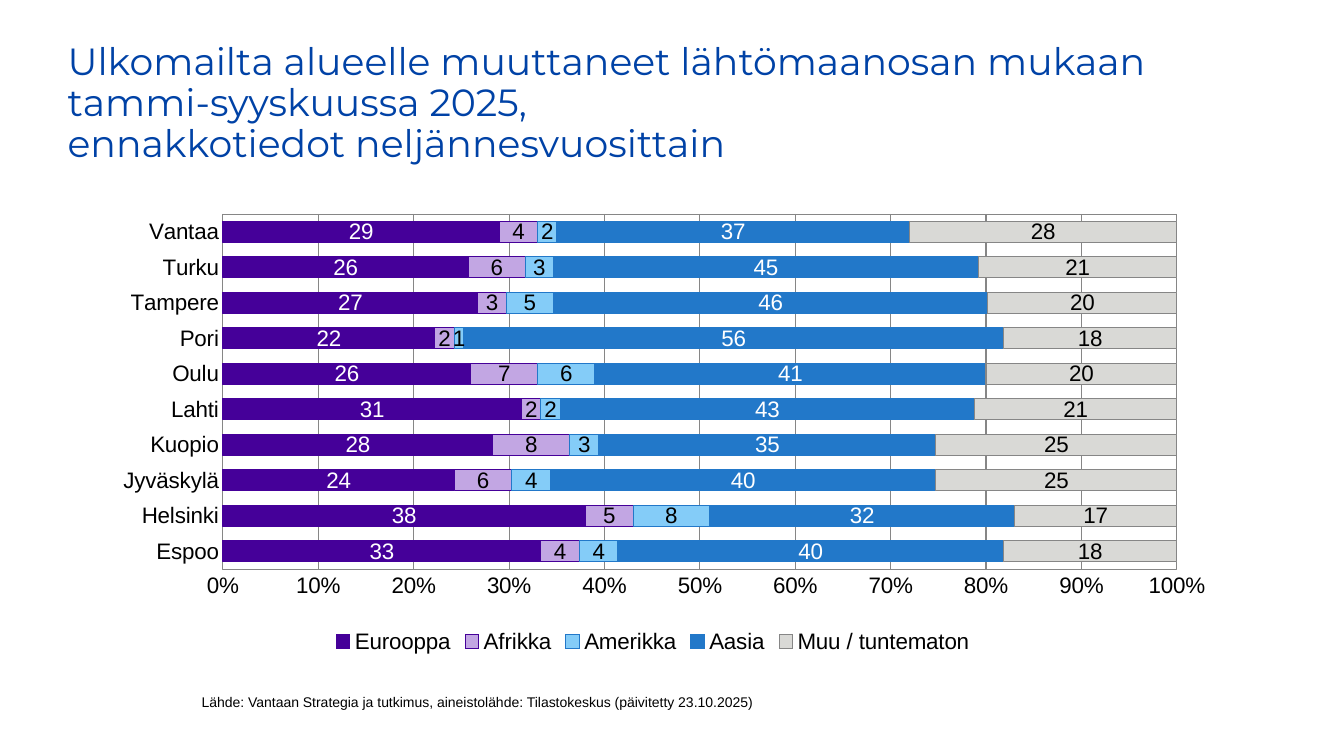
"""Builds a slide with a stacked bar chart of immigration by continent of departure."""
import pptx
import pptx.chart.data
import pptx.dml.color
import pptx.enum.chart
import pptx.enum.text
import pptx.oxml
import pptx.oxml.ns
import pptx.util

Cm, Pt = pptx.util.Cm, pptx.util.Pt
GREY = "868686"
PURPLE = "450099"
BLUE = "2278C9"


def rgb(value):
    return pptx.dml.color.RGBColor.from_string(value)


def set_font(font, size, color, name="Arial"):
    for key, value in {"size": Pt(size), "name": name, "bold": False}.items():
        setattr(font, key, value)
    font.color.rgb = rgb(color)


prs = pptx.Presentation()
prs.slide_width, prs.slide_height = Cm(33.87), Cm(19.05)
s = prs.slides.add_slide(prs.slide_layouts[5])

title = s.shapes.title
frame = {"left": Cm(1.45), "top": Cm(0.97), "width": Cm(28.5), "height": Cm(3.3)}
for key, value in frame.items():
    setattr(title, key, value)
tf = title.text_frame
tf.word_wrap = True
tf.auto_size = pptx.enum.text.MSO_AUTO_SIZE.NONE
tf.vertical_anchor = pptx.enum.text.MSO_ANCHOR.MIDDLE
p = tf.paragraphs[0]
p.text = ("Ulkomailta alueelle muuttaneet lähtömaanosan mukaan "
          "tammi-syyskuussa 2025, \vennakkotiedot neljännesvuosittain")
p.alignment = pptx.enum.text.PP_ALIGN.LEFT
p.line_spacing = 0.9
for r in p.runs:
    set_font(r.font, 27, "0042A6", "Montserrat")

cities = ["Espoo", "Helsinki", "Jyväskylä", "Kuopio", "Lahti",
          "Oulu", "Pori", "Tampere", "Turku", "Vantaa"]
continents = [
    ("Eurooppa", [33, 38, 24, 28, 31, 26, 22, 27, 26, 29], PURPLE, PURPLE, "FFFFFF"),
    ("Afrikka", [4, 5, 6, 8, 2, 7, 2, 3, 6, 4], "C2A6E3", PURPLE, "000000"),
    ("Amerikka", [4, 8, 4, 3, 2, 6, 1, 5, 3, 2], "84CCF8", BLUE, "000000"),
    ("Aasia", [40, 32, 40, 35, 43, 41, 56, 46, 45, 37], BLUE, BLUE, "FFFFFF"),
    ("Muu / tuntematon", [18, 17, 25, 25, 21, 20, 18, 20, 21, 28], "D9D9D6", GREY, "000000"),
]
data = pptx.chart.data.CategoryChartData(number_format="0")
data.categories = cities
for name, values, *colors in continents:
    data.add_series(name, values)

chart = s.shapes.add_chart(
    pptx.enum.chart.XL_CHART_TYPE.BAR_STACKED_100,
    Cm(1.85), Cm(5), Cm(29.21), Cm(11.58), data).chart
chart.has_title = False
set_font(chart.font, 16, "000000")
chart.has_legend = True
chart.legend.position = pptx.enum.chart.XL_LEGEND_POSITION.BOTTOM
chart.legend.include_in_layout = False
set_font(chart.legend.font, 16, "000000")

plot = chart.plots[0]
for key, value in {"gap_width": 70, "overlap": 100, "vary_by_categories": False}.items():
    setattr(plot, key, value)
for series, (name, values, fill, line, label) in zip(plot.series, continents):
    series.format.fill.solid()
    series.format.fill.fore_color.rgb = rgb(fill)
    series.format.line.color.rgb = rgb(line)
    series.format.line.width = Pt(0.75)
    labels = series.data_labels
    label_format = {
        "show_value": True, "number_format": "0", "number_format_is_linked": False,
        "position": pptx.enum.chart.XL_LABEL_POSITION.CENTER}
    for key, value in label_format.items():
        setattr(labels, key, value)
    set_font(labels.font, 16, label)

cat_axis, val_axis = chart.category_axis, chart.value_axis
for axis in (cat_axis, val_axis):
    axis.major_tick_mark = axis.minor_tick_mark = pptx.enum.chart.XL_TICK_MARK.NONE
    set_font(axis.tick_labels.font, 16, "000000")
val_axis.has_major_gridlines = True
for line in (cat_axis.format.line, val_axis.major_gridlines.format.line):
    line.color.rgb = rgb(GREY)
    line.width = Pt(0.75)
val_axis.format.line.fill.background()
val_scale = {"minimum_scale": 0, "maximum_scale": 1, "major_unit": 0.1}
for key, value in val_scale.items():
    setattr(val_axis, key, value)
val_axis.tick_labels.number_format = "0%"
val_axis.tick_labels.number_format_is_linked = False

ns = pptx.oxml.ns.nsdecls("c", "a")
plot_area = chart.element.find(".//" + pptx.oxml.ns.qn("c:plotArea"))
for old in plot_area.findall(pptx.oxml.ns.qn("c:layout")):
    plot_area.remove(old)
plot_area.insert(0, pptx.oxml.parse_xml(
    f'<c:layout {ns}><c:manualLayout><c:layoutTarget val="inner"/>'
    '<c:xMode val="edge"/><c:yMode val="edge"/><c:x val="0.129"/><c:y val="0.034"/>'
    '<c:w val="0.823"/><c:h val="0.773"/></c:manualLayout></c:layout>'))
plot_area.append(pptx.oxml.parse_xml(
    f'<c:spPr {ns}><a:noFill/><a:ln w="9525"><a:solidFill>'
    f'<a:srgbClr val="{GREY}"/></a:solidFill></a:ln></c:spPr>'))

sp = s.shapes.add_textbox(Cm(4.83), Cm(17.32), Cm(21.67), Cm(0.76))
tf = sp.text_frame
tf.word_wrap = True
tf.vertical_anchor = pptx.enum.text.MSO_ANCHOR.MIDDLE
r = tf.paragraphs[0].add_run()
r.text = "Lähde: Vantaan Strategia ja tutkimus, aineistolähde: Tilastokeskus (päivitetty 23.10.2025)"
set_font(r.font, 10, "000000")

prs.save("out.pptx")
